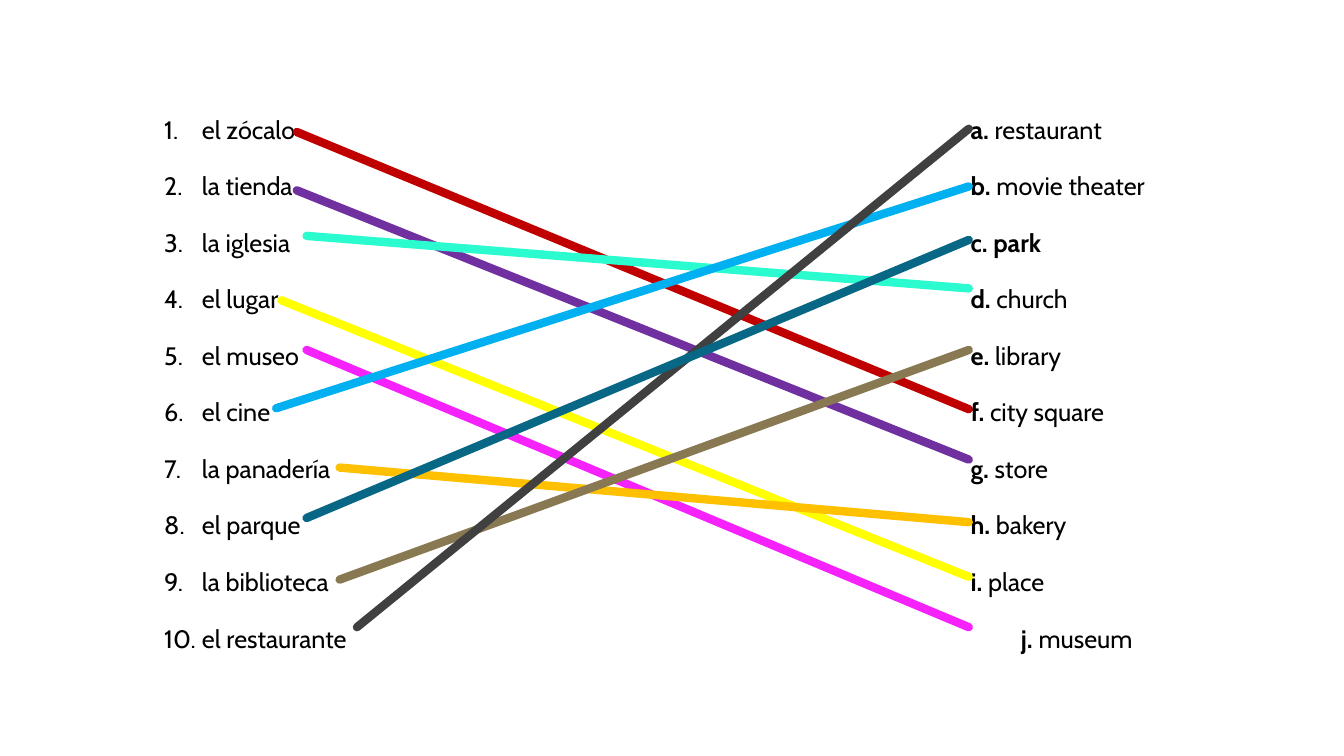
from lxml import etree
from pptx import Presentation
from pptx.dml.color import RGBColor
from pptx.enum.shapes import MSO_CONNECTOR
from pptx.oxml.ns import qn
from pptx.util import Pt

STRAIGHT = MSO_CONNECTOR.STRAIGHT
BLANK_LAYOUT = 6
COLORS = {
    "text": "000000", "red": "C00000", "purple": "7030A0", "mint": "2BFCCF",
    "yellow": "FFFF00", "pink": "F622FB", "blue": "00B0F0", "orange": "FFC000",
    "olive": "887952", "charcoal": "404040", "teal": "076785",
}
VOCABULARY = [
    ("el zócalo", "a.", "restaurant"),
    ("la tienda", "b.", "movie theater"),
    ("la iglesia", "c.", "park"),
    ("el lugar", "d.", "church"),
    ("el museo", "e.", "library"),
    ("el cine", "f.", "city square"),
    ("la panadería", "g.", "store"),
    ("el parque", "h.", "bakery"),
    ("la biblioteca", "i.", "place"),
    ("el restaurante", "j.", "museum"),
]
BOLD_MEANINGS = {"park"}
MEANING_TAB = 576
LAST_MEANING_TAB = 612
MATCH_END = 692
MATCHES = [
    ("red", 212, 94.3, 292.3),
    ("purple", 212, 136, 328.3),
    ("mint", 219, 168.5, 206),
    ("yellow", 201, 214.5, 412),
    ("pink", 219, 250, 448),
    ("blue", 197.3, 291.6, 133.2),
    ("orange", 242.6, 334, 373),
    ("olive", 242.6, 414, 250),
    ("charcoal", 255, 448, 92),
    ("teal", 219, 370, 171.4),
]


class MatchingSlide:
    """Draws a vocabulary matching exercise in one style."""

    font_name = "Cabin"
    font_size = 18
    line_width = 6
    indent = 27

    def __init__(self, deck):
        self.slide = deck.slides.add_slide(deck.slide_layouts[BLANK_LAYOUT])

    def run(self, paragraph, text, bold=False):
        run = paragraph.add_run()
        run.text = text
        run.font.name = self.font_name
        run.font.size = Pt(self.font_size)
        run.font.bold = bold
        run.font.color.rgb = RGBColor.from_string(COLORS["text"])

    def number(self, paragraph, tab):
        properties = paragraph._p.get_or_add_pPr()
        properties.set("marL", str(Pt(self.indent)))
        properties.set("indent", str(-Pt(self.indent)))
        etree.SubElement(properties, qn("a:buFont"), typeface="+mj-lt")
        etree.SubElement(properties, qn("a:buAutoNum"), type="arabicPeriod")
        tabs = etree.SubElement(properties, qn("a:tabLst"))
        etree.SubElement(tabs, qn("a:tab"), pos=str(Pt(tab)), algn="l")

    def word_list(self, left, top, width, height, vocabulary):
        box = self.slide.shapes.add_textbox(Pt(left), Pt(top), Pt(width), Pt(height))
        frame = box.text_frame
        frame.word_wrap = True
        for index, (word, letter, meaning) in enumerate(vocabulary):
            entry = frame.add_paragraph() if index else frame.paragraphs[0]
            entry.line_spacing = Pt(32.4)
            entry.space_after = Pt(8)
            is_last = index == len(vocabulary) - 1
            self.number(entry, LAST_MEANING_TAB if is_last else MEANING_TAB)
            self.run(entry, f"{word}\t")
            self.run(entry, f"{letter} ", bold=True)
            self.run(entry, meaning, bold=meaning in BOLD_MEANINGS)

    def match(self, color, start_x, start_y, end_x, end_y):
        line = self.slide.shapes.add_connector(
            STRAIGHT, Pt(start_x), Pt(start_y), Pt(end_x), Pt(end_y))
        line.line.color.rgb = RGBColor.from_string(COLORS[color])
        line.line.width = Pt(self.line_width)
        properties = line._element.spPr
        properties.find(qn("a:ln")).set("cap", "rnd")
        etree.SubElement(properties, qn("a:effectLst"))


def main():
    deck = Presentation()
    deck.slide_width, deck.slide_height = Pt(960), Pt(540)
    exercise = MatchingSlide(deck)
    exercise.word_list(110.2, 67, 849.6, 457, VOCABULARY)
    for color, start_x, start_y, end_y in MATCHES:
        exercise.match(color, start_x, start_y, MATCH_END, end_y)
    deck.save("out.pptx")


if __name__ == "__main__":
    main()
